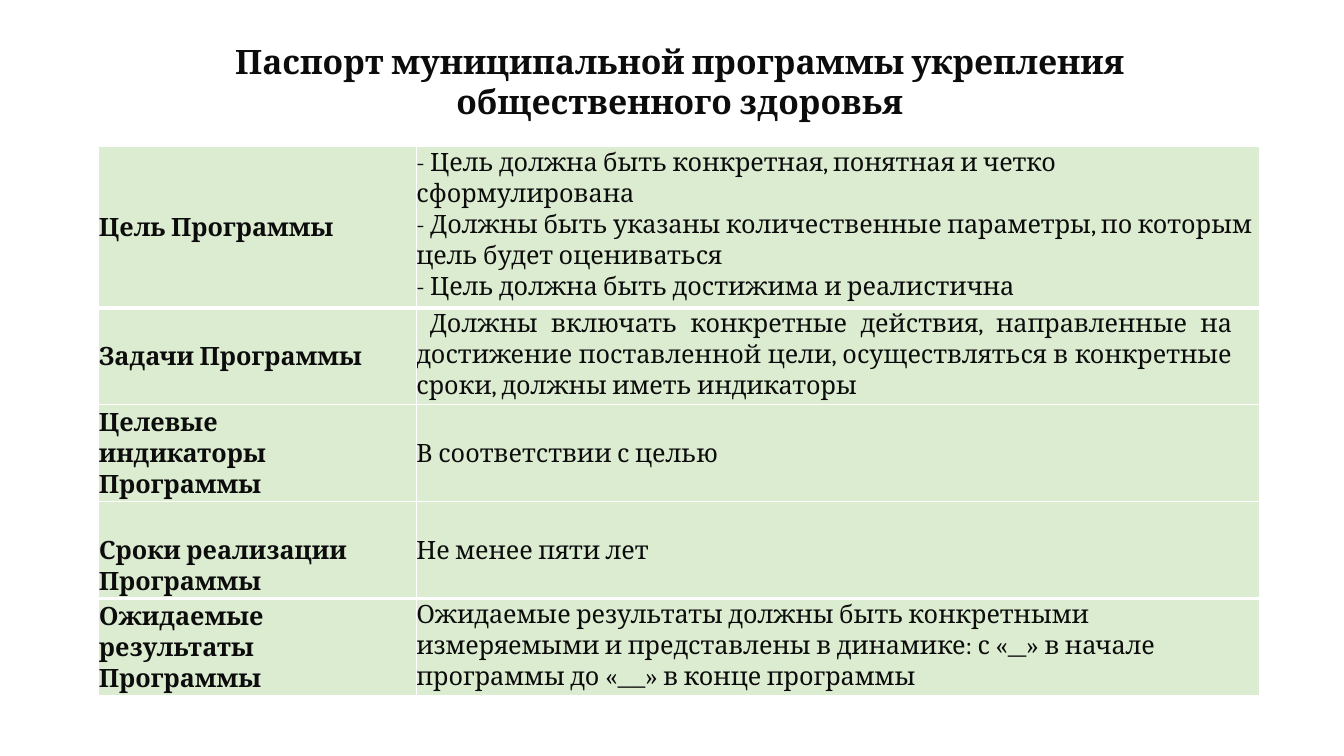
from lxml import etree
from pptx import Presentation
from pptx.dml.color import RGBColor
from pptx.enum.text import MSO_ANCHOR, MSO_AUTO_SIZE, PP_ALIGN
from pptx.oxml.ns import qn
from pptx.util import Pt

TOP, MIDDLE = MSO_ANCHOR.TOP, MSO_ANCHOR.MIDDLE
LEFT, CENTER, JUSTIFY = PP_ALIGN.LEFT, PP_ALIGN.CENTER, PP_ALIGN.JUSTIFY

TITLE = "Паспорт муниципальной программы укрепления общественного здоровья"
ROWS = [
    {"label": "Цель Программы",
     "body": ["- Цель должна быть конкретная, понятная и четко сформулирована",
              "- Должны быть указаны количественные параметры, по которым цель будет оцениваться",
              "- Цель должна быть достижима и реалистична"],
     "height": 115.2},
    {"label": "Задачи Программы",
     "body": [" Должны включать конкретные действия, направленные на достижение "
              "поставленной цели, осуществляться в конкретные сроки, должны иметь индикаторы"],
     "align": JUSTIFY, "body_indent": 20},
    {"label": "Целевые индикаторы Программы", "label_indent": 40,
     "body": ["В соответствии с целью"], "align": JUSTIFY, "anchor": MIDDLE},
    {"label": "Сроки реализации Программы", "label_top": 22.3,
     "body": ["Не менее пяти лет"], "anchor": MIDDLE},
    {"label": "Ожидаемые результаты Программы",
     "body": ["Ожидаемые результаты должны быть конкретными измеряемыми и представлены "
              "в динамике: с «__» в начале программы до «___» в конце программы"]},
]

COLORS = {"text": "0C0C0C", "cell": "DCECD1", "border": "FFFFFF"}
FONT = "Cambria"
SLIDE_SIZE = (960, 540)
TITLE_BOX = {"left": 152.6, "top": 25.2, "width": 666, "height": 65.5}
TABLE_LEFT, TABLE_TOP = 70.6, 104.8
COLUMN_WIDTHS = (226.8, 602.6)
ROW_HEIGHT = 69.2
THIN, THICK = 1, 3
THICK_EDGES = (1, 4)


def set_all(target, values):
    for name, value in values.items():
        setattr(target, name, value)


def format_paragraph(paragraph, size, bold, align, spacing):
    set_all(paragraph, {"alignment": align, "line_spacing": spacing, "space_before": Pt(0)})
    set_all(paragraph.font, {"name": FONT, "size": Pt(size), "bold": bold})
    paragraph.font.color.rgb = RGBColor.from_string(COLORS["text"])


def add_border(cell, side, width):
    line = etree.SubElement(cell._tc.get_or_add_tcPr(), qn(f"a:ln{side}"), w=str(Pt(width)))
    fill = etree.SubElement(line, qn("a:solidFill"))
    etree.SubElement(fill, qn("a:srgbClr"), val=COLORS["border"])


def fill_cell(cell, lines, row_index, bold, align, anchor, right_indent, top):
    set_all(cell, {"margin_left": 0, "margin_right": 0, "margin_top": Pt(top),
                   "margin_bottom": 0, "vertical_anchor": anchor})
    widths = {"L": THIN, "R": THIN,
              "T": THICK if row_index in THICK_EDGES else THIN,
              "B": THICK if row_index + 1 in THICK_EDGES else THIN}
    for side, width in widths.items():
        add_border(cell, side, width)
    cell.fill.solid()
    cell.fill.fore_color.rgb = RGBColor.from_string(COLORS["cell"])
    cell.text_frame.text = "\n".join(lines)
    for paragraph in cell.text_frame.paragraphs:
        format_paragraph(paragraph, 18, bold, align, 1.07)
        paragraph._p.get_or_add_pPr().set("marR", str(Pt(right_indent)))


def add_title(slide):
    title = slide.shapes.title
    set_all(title, {name: Pt(value) for name, value in TITLE_BOX.items()})
    title.text = TITLE
    set_all(title.text_frame, {"word_wrap": True, "auto_size": MSO_AUTO_SIZE.NONE,
                               "vertical_anchor": MIDDLE})
    format_paragraph(title.text_frame.paragraphs[0], 24, True, CENTER, 1.0)


def add_passport(slide):
    heights = [row.get("height", ROW_HEIGHT) for row in ROWS]
    table = slide.shapes.add_table(len(ROWS), len(COLUMN_WIDTHS), Pt(TABLE_LEFT), Pt(TABLE_TOP),
                                   Pt(sum(COLUMN_WIDTHS)), Pt(sum(heights))).table
    set_all(table, {"first_row": False, "horz_banding": False})
    for column, width in zip(table.columns, COLUMN_WIDTHS):
        column.width = Pt(width)
    for index, row in enumerate(ROWS):
        table.rows[index].height = Pt(heights[index])
        fill_cell(table.cell(index, 0), [row["label"]], index, True, LEFT, MIDDLE,
                  row.get("label_indent", 0), row.get("label_top", 0))
        fill_cell(table.cell(index, 1), row["body"], index, False, row.get("align", LEFT),
                  row.get("anchor", TOP), row.get("body_indent", 0), 0)


def main():
    presentation = Presentation()
    presentation.slide_width, presentation.slide_height = map(Pt, SLIDE_SIZE)
    slide = presentation.slides.add_slide(presentation.slide_layouts.get_by_name("Title Only"))
    add_title(slide)
    add_passport(slide)
    presentation.save("out.pptx")


if __name__ == "__main__":
    main()
